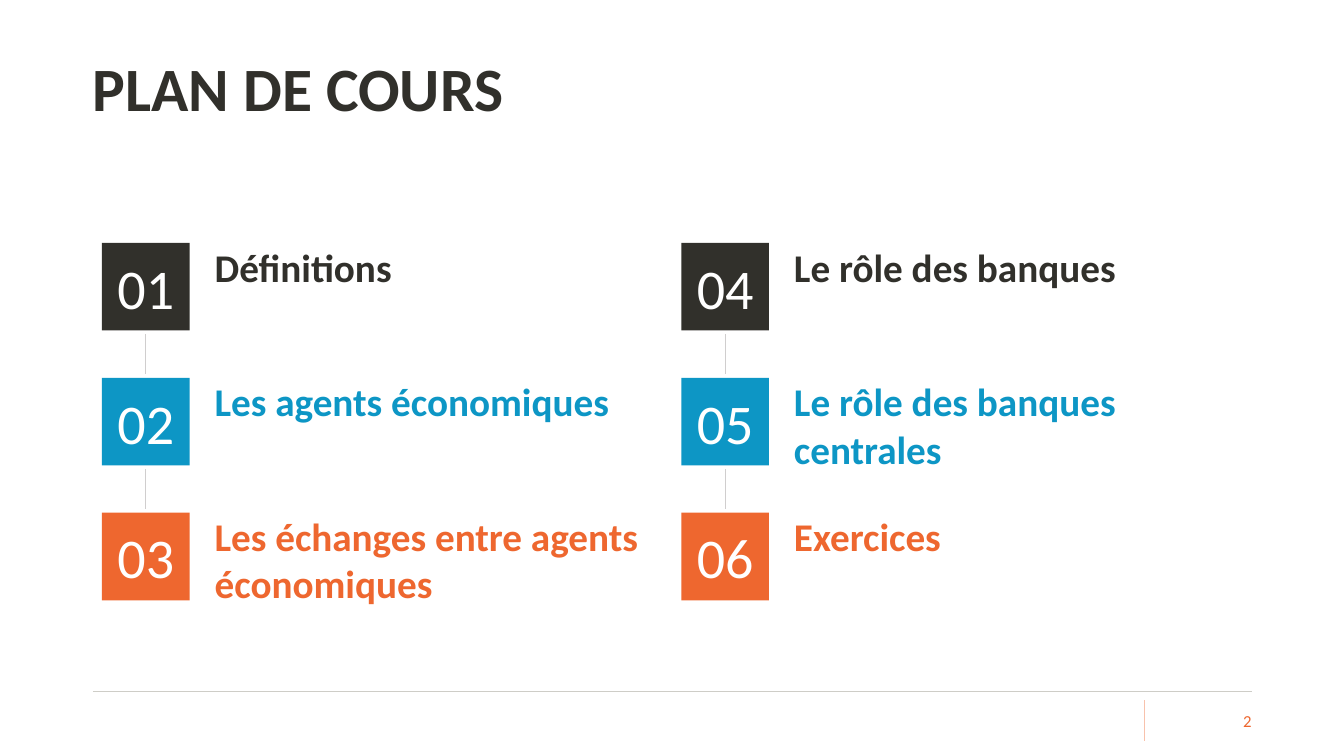
from lxml.etree import SubElement
from pptx import Presentation
from pptx.dml.color import RGBColor
from pptx.enum.shapes import MSO_CONNECTOR, MSO_SHAPE
from pptx.enum.text import MSO_ANCHOR, MSO_AUTO_SIZE, PP_ALIGN
from pptx.oxml.ns import qn
from pptx.util import Cm, Pt

DARK = RGBColor(0x31, 0x30, 0x2B)
BLUE = RGBColor(0x0D, 0x96, 0xC5)
ORANGE = RGBColor(0xEE, 0x67, 0x2F)
WHITE = RGBColor(0xFF, 0xFF, 0xFF)
GREY = RGBColor(0xD0, 0xCE, 0xCE)
RULE = RGBColor(0xCE, 0xCD, 0xC7)
PEACH = RGBColor(0xF8, 0xC2, 0xAC)

COLORS = [DARK, BLUE, ORANGE]
TOPICS = [
    [("Définitions", 1), ("Les agents économiques", 1),
     ("Les échanges entre agents économiques", 2)],
    [("Le rôle des banques", 1), ("Le rôle des banques centrales", 2),
     ("Exercices", 1)],
]
LEFT, TOP = 2.57, 6.12
COL_STEP, ROW_STEP = 14.6, 3.4
SIDE = 2.21


def write(shape, text, size, color, bold=False, align=PP_ALIGN.LEFT,
          anchor=MSO_ANCHOR.MIDDLE, inset=(0.25, 0.13, 0.25, 0.13)):
    frame = shape.text_frame
    frame.word_wrap = True
    frame.vertical_anchor = anchor
    frame.margin_left, frame.margin_top, frame.margin_right, frame.margin_bottom = map(Cm, inset)
    para = frame.paragraphs[0]
    para.text = text
    para.alignment = align
    font = para.font
    font.name = "Calibri"
    font.size = Pt(size)
    font.bold = bold
    font.color.rgb = color
    return frame


def add_text(slide, place, *args, **style):
    return write(slide.shapes.add_textbox(*map(Cm, place)), *args, **style)


def add_line(slide, ends, color):
    line = slide.shapes.add_connector(MSO_CONNECTOR.STRAIGHT, *map(Cm, ends))
    line.line.color.rgb = color
    line.line.width = Pt(0.5)
    SubElement(line._element.spPr, qn("a:effectLst"))


def add_topic(slide, x, y, number, text, lines, color):
    frame = add_text(slide, (x + 2.59, y, 11.71, 1.19 * lines), text, 28, color,
                     bold=True, anchor=MSO_ANCHOR.TOP, inset=(0.25, 0, 0.25, 0))
    frame.auto_size = MSO_AUTO_SIZE.SHAPE_TO_FIT_TEXT
    box = slide.shapes.add_shape(MSO_SHAPE.RECTANGLE, *map(Cm, (x, y, SIDE, SIDE)))
    box.shadow.inherit = False
    box.fill.solid()
    box.fill.fore_color.rgb = color
    box.line.fill.background()
    write(box, f"{number:02}", 40, WHITE, align=PP_ALIGN.CENTER)


def main():
    deck = Presentation()
    deck.slide_width, deck.slide_height = Cm(33.87), Cm(19.05)
    slide = deck.slides.add_slide(deck.slide_layouts[6])

    add_line(slide, (2.34, 17.42, 31.55, 17.42), RULE)
    add_line(slide, (28.83, 17.65, 28.83, 18.67), PEACH)

    for col, topics in enumerate(TOPICS):
        x = LEFT + col * COL_STEP
        for row, (text, lines) in enumerate(topics):
            y = TOP + row * ROW_STEP
            number = col * len(topics) + row + 1
            add_topic(slide, x, y, number, text, lines, COLORS[row])
            if row:
                mid = x + SIDE / 2
                add_line(slide, (mid, y - 1.1, mid, y - 0.1), GREY)

    title = add_text(slide, (2.34, 0.46, 26.59, 3.68), "PLAN DE COURS", 44, DARK,
                     bold=True, inset=(0, 0.13, 0.25, 0.13))
    title.paragraphs[0].line_spacing = 0.9
    add_text(slide, (29.13, 17.65, 2.41, 1.02), "2", 12, ORANGE,
             align=PP_ALIGN.RIGHT, inset=(0, 0.13, 0, 0.13))
    deck.save("out.pptx")


if __name__ == "__main__":
    main()
